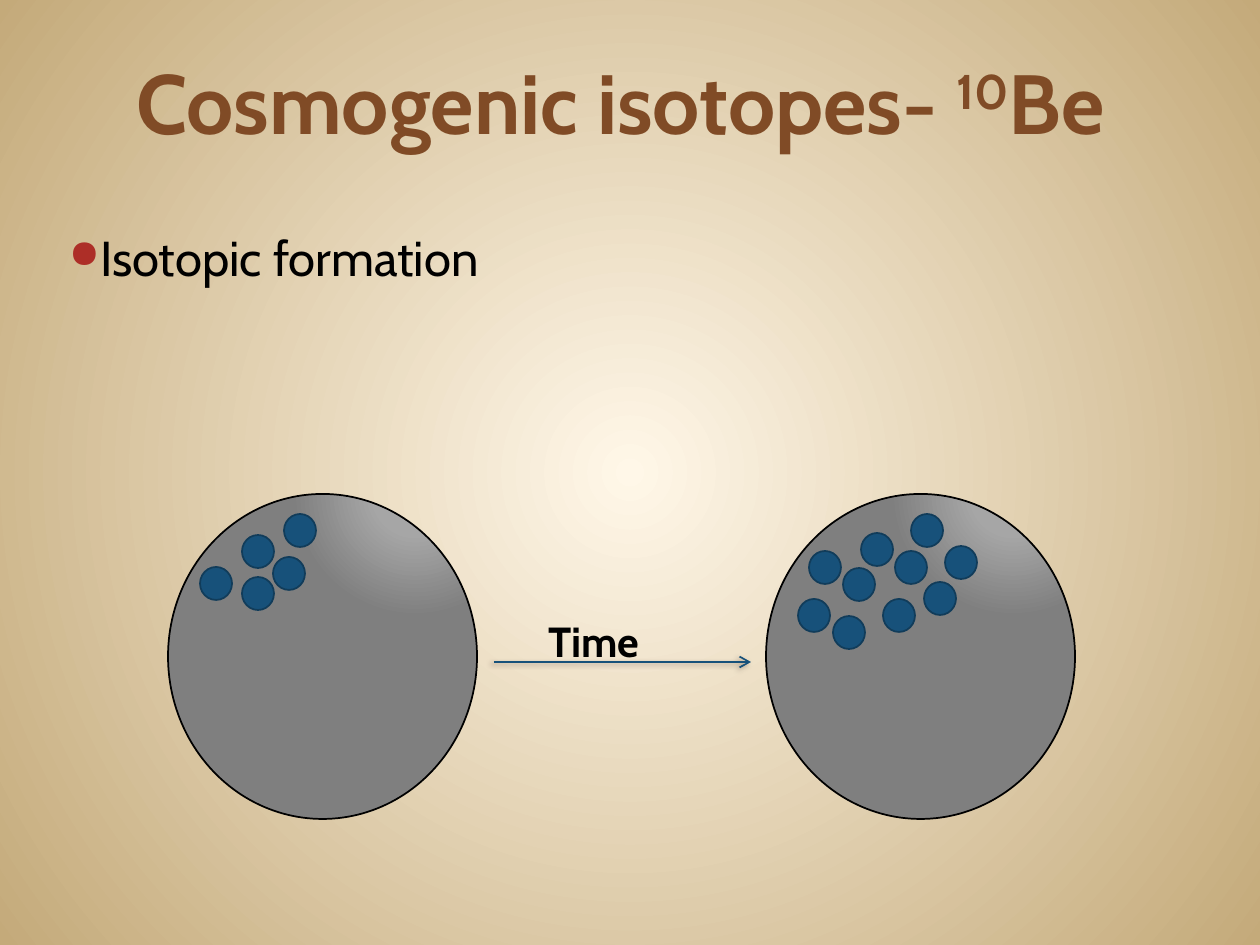
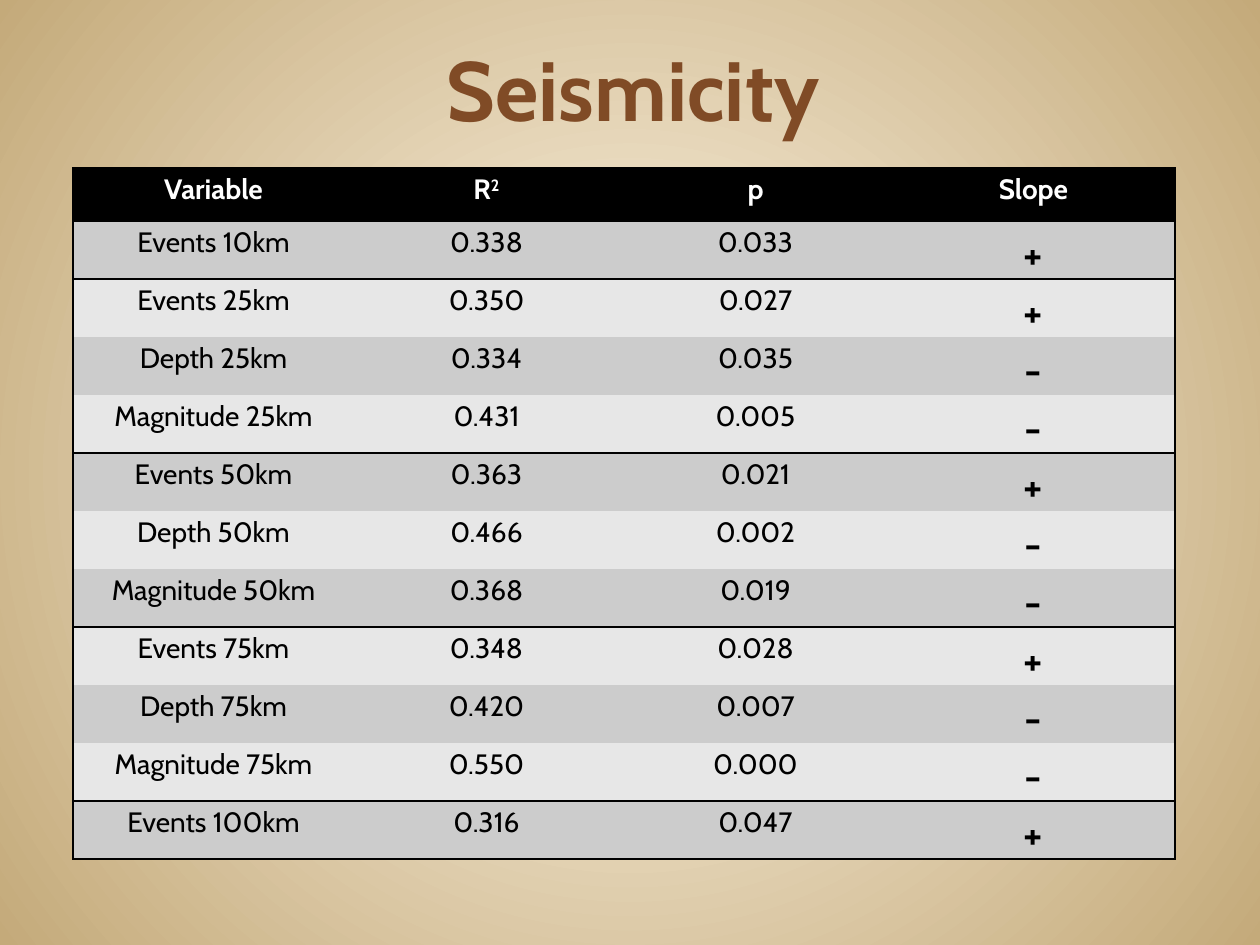
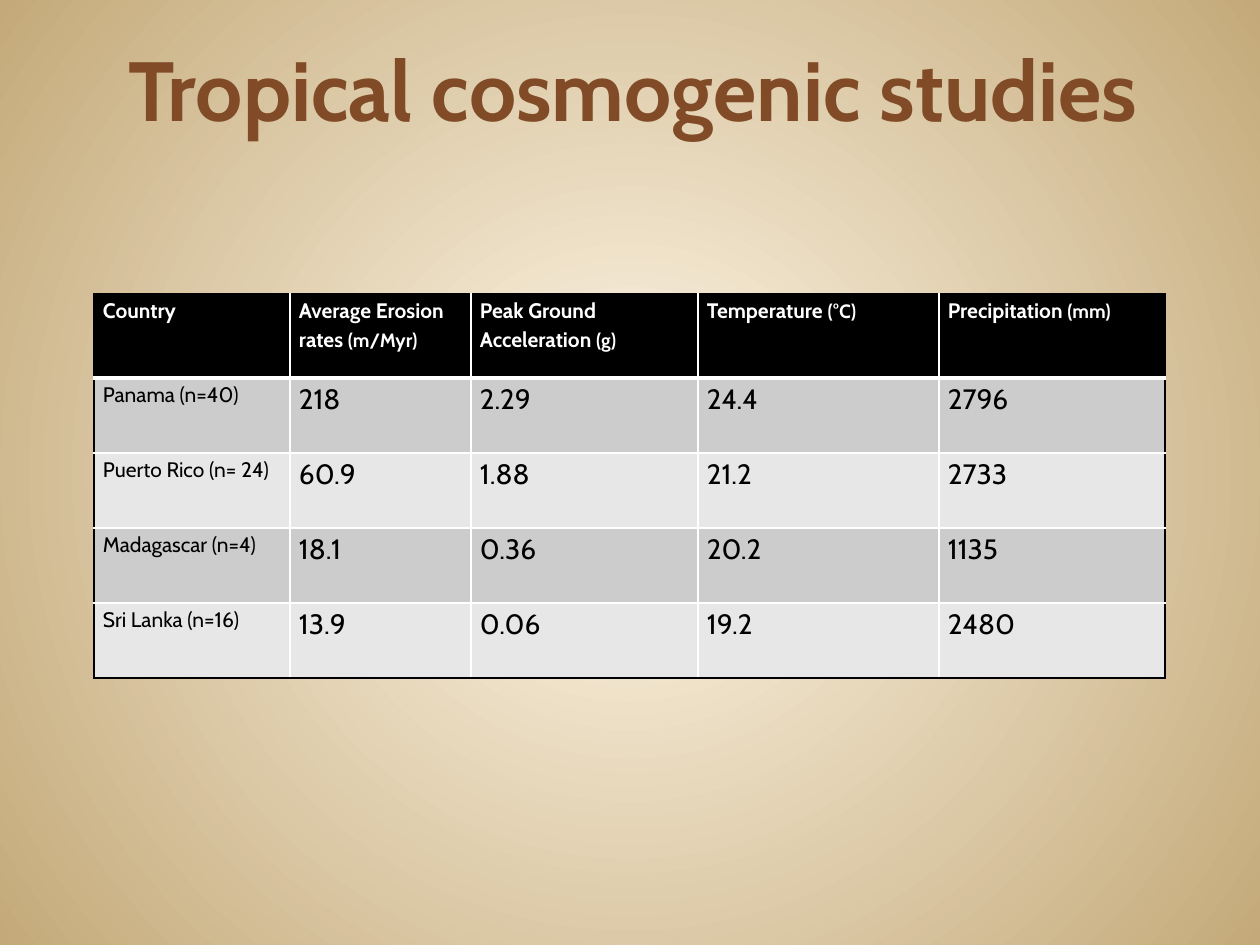
import pptx
import pptx.util
import pptx.dml.color
import pptx.enum.shapes
import pptx.enum.text
import pptx.oxml
import pptx.oxml.ns
from lxml import etree


class Theme:
    font = "Cabin"
    title, body, label, sign, value, heading, unit = 48, 28, 24, 24, 16, 12, 11
    brown, red, black, white = "804B26", "AD2E27", "000000", "FFFFFF"
    blue, navy, shadow = "17517A", "113C5A", "1A0000"
    bands = ("CCCCCC", "E7E7E7")
    backdrop = ((0, "FFF7E8"), (1, "C4AA7A"))
    rock = ((0.18, "A6A6A6"), (0.55, "7F7F7F"))


SLIDE_SIZE = (1260, 945)
TITLE_BOX = (69, 0, 1128, 145)

FORMATION = {
    "title": ["Cosmogenic isotopes- ", ("10", {"raised": True}), "Be "],
    "title_box": (63, 0, 1134, 158),
    "bullet": "Isotopic formation",
    "bullet_box": (63, 221, 1134, 624),
    "time": "Time",
    "time_box": (536, 609, 126, 63),
    "arrow": (494, 662, 751, 662),
}
ROCK_SIZE = (309, 325)
ISOTOPE_SIZE = (32, 33)
ROCKS = [
    ((168, 494), [(242, 535), (242, 577), (273, 557), (284, 514), (200, 567)]),
    ((766, 494), [(843, 568), (809, 551), (861, 533), (911, 514), (895, 551),
                  (883, 599), (833, 616), (798, 599), (924, 582), (945, 546)]),
]

SEISMIC_HEADER = ["Variable", ["R", ("2", {"raised": True})], "p", "Slope"]
SEISMIC_GROUPS = [
    [("Events 10km", "0.338", "0.033", "+")],
    [("Events 25km", "0.350", "0.027", "+"),
     ("Depth 25km", "0.334", "0.035", "-"),
     ("Magnitude 25km", "0.431", "0.005", "-")],
    [("Events 50km", "0.363", "0.021", "+"),
     ("Depth 50km", "0.466", "0.002", "-"),
     ("Magnitude 50km", "0.368", "0.019", "-")],
    [("Events 75km", "0.348", "0.028", "+"),
     ("Depth 75km", "0.420", "0.007", "-"),
     ("Magnitude 75km", "0.550", "0.000", "-")],
    [("Events 100km", "0.316", "0.047", "+")],
]
SEISMIC_COLUMNS = (281, 265, 273, 283)

STUDY_HEADER = [
    ("Country", ""), ("Average Erosion rates ", "(m/Myr)"),
    ("Peak Ground Acceleration ", "(g)"), ("Temperature ", "(°C)"),
    ("Precipitation ", "(mm)"),
]
STUDIES = [
    ("Panama (n=40)", "218", "2.29", "24.4", "2796"),
    ("Puerto Rico (n= 24)", "60.9", "1.88", "21.2", "2733"),
    ("Madagascar (n=4)", "18.1", "0.36", "20.2", "1135"),
    ("Sri Lanka (n=16)", "13.9", "0.06", "19.2", "2480"),
]
STUDY_COLUMNS = (196, 181, 227, 241, 226)


def px(length):
    return round(length * 914400 / 126)


def scaled(*lengths):
    return [px(length) for length in lengths]


def rgb(color):
    return pptx.dml.color.RGBColor.from_string(color)


def xml(parent, tag, **attributes):
    return etree.SubElement(parent, pptx.oxml.ns.qn(tag),
                            {key: str(value) for key, value in attributes.items()})


def write(frame, text, size, color=Theme.black, bold=False, align="LEFT", spacing=None):
    paragraph = frame.paragraphs[0]
    paragraph.alignment = getattr(pptx.enum.text.PP_ALIGN, align)
    if spacing:
        paragraph.line_spacing = spacing
    for part in [text] if isinstance(text, str) else text:
        words, changes = (part, {}) if isinstance(part, str) else part
        run = paragraph.add_run()
        run.text = words
        run.font.name = Theme.font
        run.font.size = pptx.util.Pt(changes.get("size", size))
        run.font.bold = bold
        run.font.color.rgb = rgb(color)
        if changes.get("raised"):
            run.font._element.set("baseline", "30000")
    return paragraph


def add_text(slide, box, text, size, inset=None, anchor="TOP", **style):
    frame = slide.shapes.add_textbox(*scaled(*box)).text_frame
    frame.word_wrap = True
    frame.vertical_anchor = getattr(pptx.enum.text.MSO_ANCHOR, anchor)
    if inset is not None:
        frame.margin_left = frame.margin_right = px(inset)
        frame.margin_top = frame.margin_bottom = px(inset)
    return write(frame, text, size, **style)


def fill_radial(fill, owner, stops, left, top):
    fill.gradient()
    for stop, (position, color) in zip(fill.gradient_stops, stops):
        stop.position = position
        stop.color.rgb = rgb(color)
    gradient = owner.xpath(".//a:gradFill")[0]
    for linear in gradient.xpath("./a:lin"):
        gradient.remove(linear)
    path = xml(gradient, "a:path", path="circle")
    xml(path, "a:fillToRect", l=left * 1000, t=top * 1000,
        r=(100 - left) * 1000, b=(100 - top) * 1000)


def add_ellipse(slide, place, size, outline, color=None):
    ellipse = slide.shapes.add_shape(pptx.enum.shapes.MSO_SHAPE.OVAL, *scaled(*place, *size))
    ellipse.shadow.inherit = False
    ellipse.line.color.rgb = rgb(outline)
    ellipse.line.width = pptx.util.Pt(1)
    if color:
        ellipse.fill.solid()
        ellipse.fill.fore_color.rgb = rgb(color)
    else:
        fill_radial(ellipse.fill, ellipse._element, Theme.rock, 80, 0)


def add_arrow(slide, ends):
    arrow = slide.shapes.add_connector(pptx.enum.shapes.MSO_CONNECTOR.STRAIGHT, *scaled(*ends))
    arrow.line.color.rgb = rgb(Theme.blue)
    arrow.line.width = pptx.util.Pt(1)
    xml(arrow.line._get_or_add_ln(), "a:tailEnd", type="arrow")
    effects = xml(arrow._element.spPr, "a:effectLst")
    shadow = xml(effects, "a:outerShdw", blurRad=pptx.util.Pt(3.1), dist=pptx.util.Pt(2),
                 dir=150 * 60000, algn="tl", rotWithShape=0)
    xml(xml(shadow, "a:srgbClr", val=Theme.shadow), "a:alpha", val=35000)


def draw_borders(cell, borders):
    properties = cell._tc.get_or_add_tcPr()
    for side in "LRTB":
        color, width = borders.get(side) or (None, 0)
        line = xml(properties, "a:ln" + side, w=pptx.util.Pt(width))
        if color:
            xml(xml(line, "a:solidFill"), "a:srgbClr", val=color)
        else:
            xml(line, "a:noFill")


def add_grid(slide, place, columns, heights, rows, style_of, horizontals, vertical=None):
    table = slide.shapes.add_table(len(rows), len(columns),
                                   *scaled(*place, sum(columns), sum(heights))).table
    for column, width in zip(table.columns, columns):
        column.width = px(width)
    edge = (Theme.black, 1)
    for r, (row, height) in enumerate(zip(rows, heights)):
        table.rows[r].height = px(height)
        for c, text in enumerate(row):
            cell = table.cell(r, c)
            cell.margin_left = cell.margin_right = px(9)
            cell.margin_top = cell.margin_bottom = 0
            draw_borders(cell, {
                "L": vertical if c else edge,
                "R": vertical if c < len(columns) - 1 else edge,
                "T": horizontals[r],
                "B": horizontals[r + 1],
            })
            cell.fill.solid()
            cell.fill.fore_color.rgb = rgb(Theme.bands[(r - 1) % 2] if r else Theme.black)
            color = Theme.black if r else Theme.white
            write(cell.text_frame, text, color=color, spacing=1.15, **style_of(r, c))


def add_title(slide, text, box=TITLE_BOX):
    add_text(slide, box, text, Theme.title, anchor="BOTTOM", color=Theme.brown,
             bold=True, align="CENTER")


def build_formation(slide):
    add_title(slide, FORMATION["title"], FORMATION["title_box"])
    bullet = add_text(slide, FORMATION["bullet_box"], FORMATION["bullet"], Theme.body, inset=6)
    properties = bullet._p.get_or_add_pPr()
    properties.set("marL", "0")
    properties.set("indent", str(-px(38)))
    xml(xml(properties, "a:buClr"), "a:srgbClr", val=Theme.red)
    xml(properties, "a:buSzPct", val=80000)
    xml(properties, "a:buChar", char="●")
    for rock, isotopes in ROCKS:
        add_ellipse(slide, rock, ROCK_SIZE, Theme.black)
        for isotope in isotopes:
            add_ellipse(slide, isotope, ISOTOPE_SIZE, Theme.navy, Theme.blue)
    add_arrow(slide, FORMATION["arrow"])
    add_text(slide, FORMATION["time_box"], FORMATION["time"], Theme.label, bold=True)


def build_seismicity(slide):
    add_title(slide, "Seismicity")
    rows, rule = [SEISMIC_HEADER], (Theme.black, 1)
    horizontals = [rule]
    for group in SEISMIC_GROUPS:
        horizontals += [rule] + [None] * (len(group) - 1)
        rows += group
    horizontals.append(rule)

    def style_of(r, c):
        is_sign = r > 0 and c == 3
        return {"size": Theme.sign if is_sign else Theme.value,
                "bold": r == 0 or is_sign, "align": "CENTER"}

    add_grid(slide, (73, 168), SEISMIC_COLUMNS, [53] * len(rows), rows, style_of, horizontals)


def build_studies(slide):
    add_title(slide, "Tropical cosmogenic studies")
    header = [[name, (unit, {"size": Theme.unit})] if unit else name
              for name, unit in STUDY_HEADER]
    rows = [header] + STUDIES
    edge, rule = (Theme.black, 1), (Theme.white, 1)
    horizontals = [edge, (Theme.white, 3)] + [rule] * (len(STUDIES) - 1) + [edge]

    def style_of(r, c):
        return {"size": Theme.value if r and c else Theme.heading, "bold": r == 0}

    add_grid(slide, (94, 294), STUDY_COLUMNS, [84] + [75] * len(STUDIES), rows,
             style_of, horizontals, vertical=rule)


def main():
    deck = pptx.Presentation()
    deck.slide_width, deck.slide_height = scaled(*SLIDE_SIZE)
    master = deck.slide_master
    fill_radial(master.background.fill, master.element, Theme.backdrop, 50, 50)
    for build in (build_formation, build_seismicity, build_studies):
        build(deck.slides.add_slide(deck.slide_layouts[6]))
    deck.save("out.pptx")


if __name__ == "__main__":
    main()
